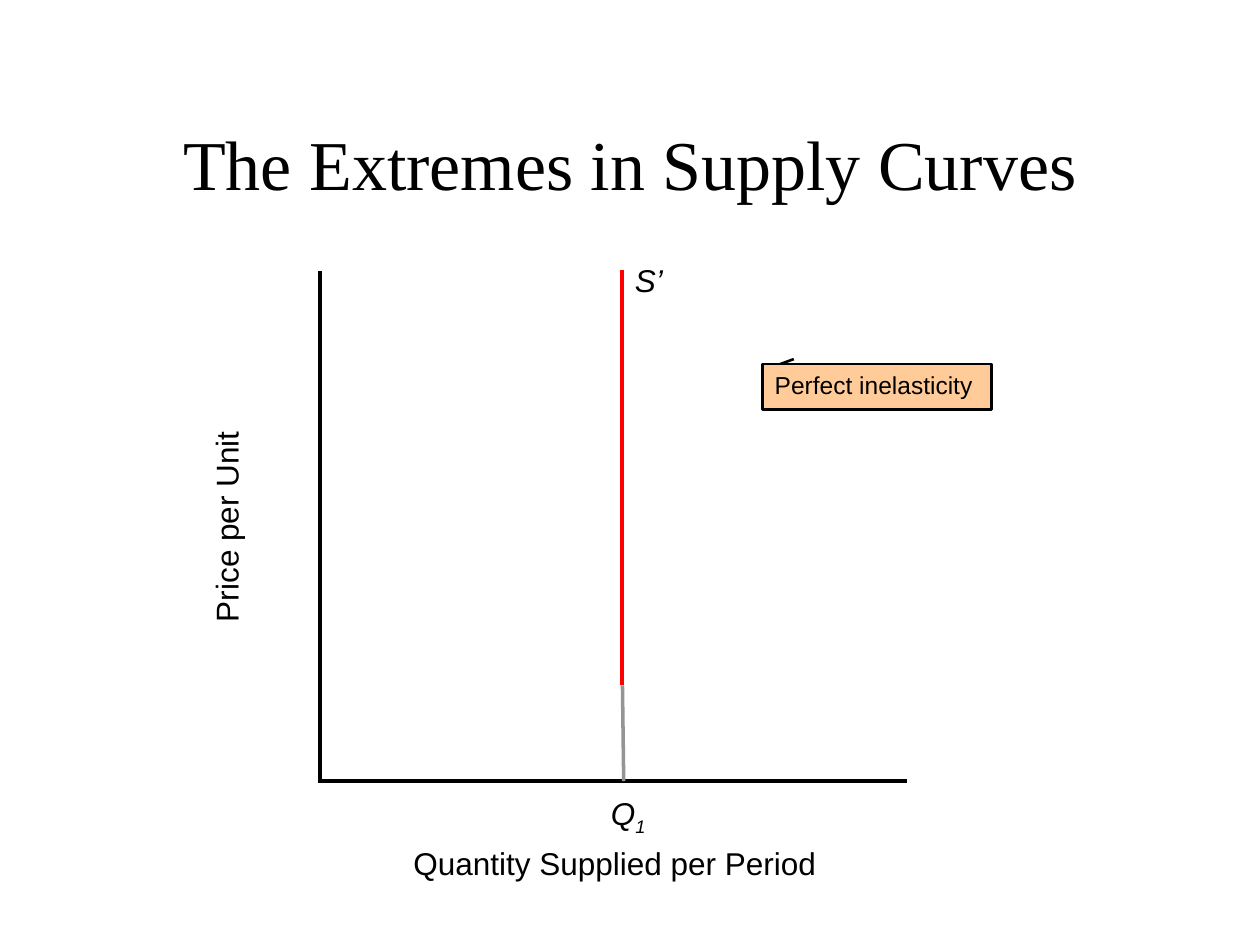
from pptx import Presentation
from pptx.util import Pt
from pptx.dml.color import RGBColor
from pptx.enum.shapes import MSO_CONNECTOR, MSO_SHAPE
from pptx.enum.text import MSO_ANCHOR, PP_ALIGN
from pptx.oxml.ns import qn
from lxml.etree import SubElement

COLORS = {"ink": "000000", "supply": "FF0000", "guide": "939598", "callout": "FFCC99"}

prs = Presentation()
prs.slide_width, prs.slide_height = Pt(720), Pt(540)
s = prs.slides.add_slide(prs.slide_layouts[6])


def color(name):
    return RGBColor.from_string(COLORS[name])


def set_text(sp, text, size, font="Arial", align=PP_ALIGN.LEFT, italic=False):
    tf = sp.text_frame
    tf.word_wrap = True
    tf.vertical_anchor = MSO_ANCHOR.TOP
    p = tf.paragraphs[0]
    p.alignment = align
    for part in text:
        r = p.add_run()
        r.text = part
        r.font.size, r.font.name, r.font.italic = Pt(size), font, italic
        r.font.color.rgb = color("ink")
    return p


# Title
sp = s.shapes.add_textbox(Pt(54), Pt(48), Pt(612), Pt(90))
set_text(sp, ["The Extremes in Supply Curves"], 40, "Times New Roman", PP_ALIGN.CENTER)
sp.text_frame.vertical_anchor = MSO_ANCHOR.MIDDLE

# Axes, supply line, guide down to Q1 and callout pointer
origin_x, origin_y, supply_x, supply_end = 182.9, 446.4, 355.7, 391.7
for x1, y1, x2, y2, name, width in [
    (origin_x, 154.8, origin_x, origin_y, "ink", 2),
    (origin_x - 0.9, origin_y, 518.4, origin_y, "ink", 2),
    (supply_x, supply_end, supply_x + 0.7, origin_y, "guide", 2),
    (supply_x, 154.1, supply_x, supply_end, "supply", 2.25),
    (453.6, 205.2, 445.7, 208.1, "ink", 1.5),
]:
    c = s.shapes.add_connector(MSO_CONNECTOR.STRAIGHT, Pt(x1), Pt(y1), Pt(x2), Pt(y2))
    c.line.color.rgb, c.line.width = color(name), Pt(width)
    SubElement(c._element.spPr, qn("a:effectLst"))

# Axis and curve labels
for x, y, w, text, align, italic, turn in [
    (-16.6, 286.6, 291.6, ["Price per Unit"], PP_ALIGN.CENTER, False, 270),
    (184.3, 478.8, 334.1, ["Quantity Supplied per Period"], PP_ALIGN.CENTER, False, 0),
    (342, 450, 35.3, ["Q", "1"], PP_ALIGN.LEFT, True, 0),
    (supply_x, 145.4, 30.2, ["S’"], PP_ALIGN.LEFT, True, 0),
]:
    sp = s.shapes.add_textbox(Pt(x), Pt(y), Pt(w), Pt(28.8))
    sp.rotation = turn
    p = set_text(sp, text, 18, align=align, italic=italic)
    for r in p.runs[1:]:  # subscript
        r.font._element.set("baseline", "-25000")

# Callout
sp = s.shapes.add_shape(MSO_SHAPE.RECTANGLE, Pt(435.6), Pt(208.1), Pt(131), Pt(25.9))
sp.shadow.inherit = False
sp.fill.solid()
sp.fill.fore_color.rgb = color("callout")
sp.line.color.rgb, sp.line.width = color("ink"), Pt(1.5)
set_text(sp, ["Perfect inelasticity"], 14)

prs.save("out.pptx")
